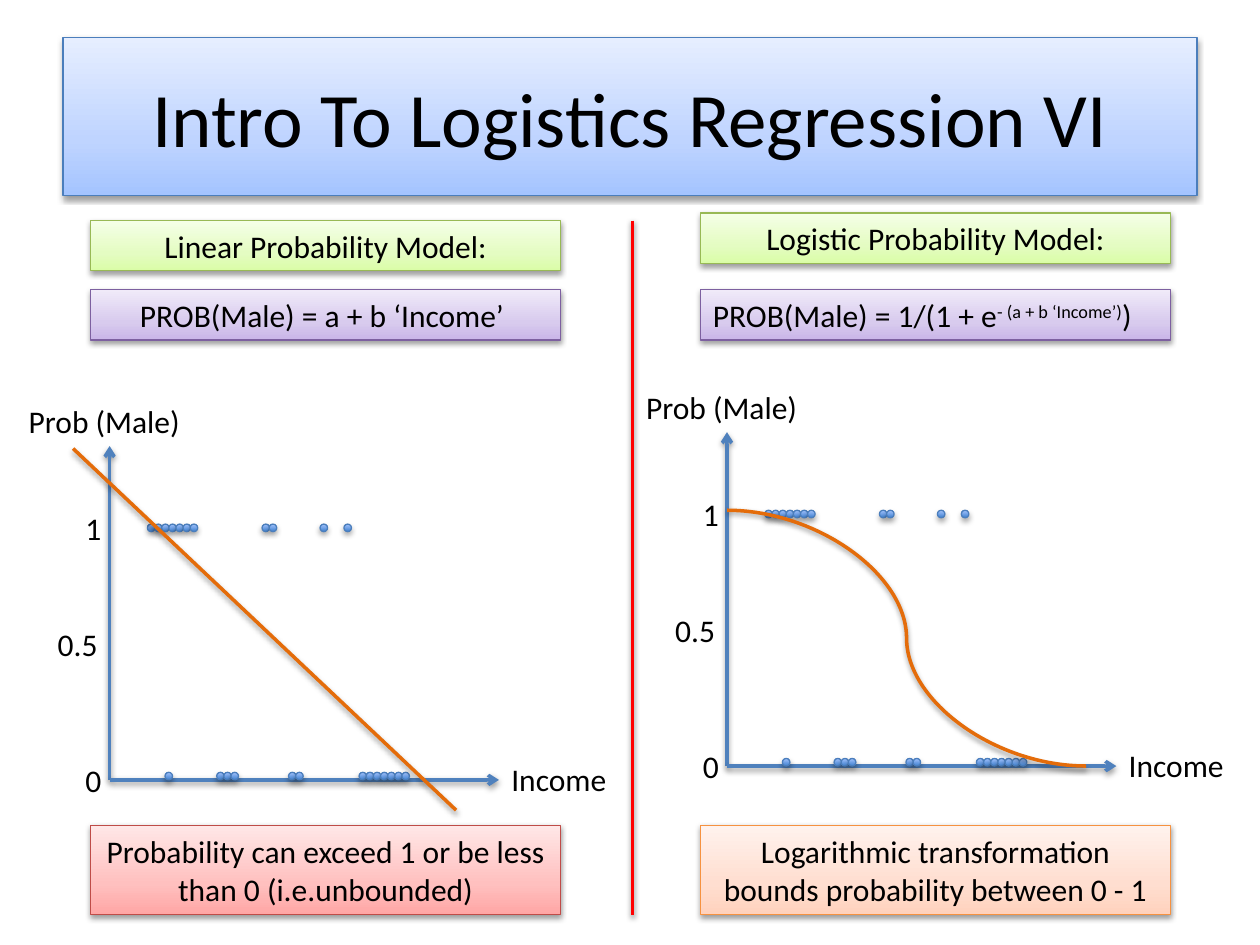
"""Build a slide that compares linear and logistic probability models."""
import copy
from dataclasses import dataclass

import lxml.etree
import pptx
import pptx.dml.color
import pptx.enum.shapes
import pptx.enum.text
import pptx.oxml.ns
import pptx.util

Inches = pptx.util.Inches
Shapes = pptx.enum.shapes.MSO_SHAPE
Connectors = pptx.enum.shapes.MSO_CONNECTOR
Align = pptx.enum.text.PP_ALIGN
Anchor = pptx.enum.text.MSO_ANCHOR
AutoSize = pptx.enum.text.MSO_AUTO_SIZE
qn = pptx.oxml.ns.qn


@dataclass(frozen=True)
class Style:
    line: str
    stops: tuple[tuple[float, str], ...]
    shadow_opacity: int = 38
    shadow_distance: int = 20000


@dataclass(frozen=True)
class Box:
    left: float
    top: float
    width: float
    height: float
    style: Style
    runs: tuple[tuple[str, int], ...]
    size: int = 18
    align: Align = Align.CENTER


@dataclass(frozen=True)
class Label:
    text: str
    left: float
    top: float
    width: float


@dataclass(frozen=True)
class DotGroup:
    left: float
    top: float
    count: int


BLUE = Style("4B7EBC", ((0, "A4C4FF"), (0.35, "BFD4FF"), (1, "E6EEFF")))
GREEN = Style("98B955", ((0, "DAFDA7"), (0.35, "E4FCC2"), (1, "F5FFE7")))
PURPLE = Style("7D60A0", ((0, "C9B5E8"), (0.35, "D8CBEE"), (1, "F0EAF9")))
RED = Style("BF4C48", ((0, "FFA6A5"), (0.35, "FFC0BF"), (1, "FFE7E7")))
ORANGE = Style("F69240", ((0, "FFD2BD"), (0.35, "FFDED0"), (1, "FFF2ED")))
DOT = Style("4B7EBC", ((0, "3F80CE"), (1, "A4C4FF")), 35, 23000)
AXIS_COLOR, CURVE_COLOR, DIVIDER_COLOR = "4F81BD", "E46C0A", "FF0000"

LEFT, RIGHT, WIDTH = 0.72, 5.56, 3.73
BOXES = (
    Box(0.5, 0.3, 9, 1.25, BLUE, (("Intro To Logistics Regression VI", 0),), 44),
    Box(LEFT, 1.75, WIDTH, 0.4, GREEN, (("Linear Probability Model:", 0),)),
    Box(LEFT, 2.3, WIDTH, 0.4, PURPLE, (("PROB(Male) = a + b ‘Income’ ", 0),)),
    Box(RIGHT, 1.69, WIDTH, 0.4, GREEN, (("Logistic Probability Model:", 0),)),
    Box(RIGHT, 2.3, WIDTH, 0.4, PURPLE,
        (("PROB(Male) = 1/(1 + e", 0), ("- (a + b ‘Income’)", 30), (")", 0)), align=Align.LEFT),
    Box(LEFT, 6.55, WIDTH, 0.71, RED,
        (("Probability can exceed 1 or be less than 0 (i.e.unbounded)", 0),)),
    Box(RIGHT, 6.55, WIDTH, 0.71, ORANGE,
        (("Logarithmic transformation bounds probability between 0 - 1", 0),)),
)

ORIGINS = ((0.87, 6.19), (5.77, 6.08))
AXIS_WIDTH, AXIS_HEIGHT = 3.09, 2.65
LABELS = (
    Label("Prob (Male)", -0.74, -3.05, 1.5),
    Label("Income", AXIS_WIDTH, -0.21, 0.95),
    Label("1", -0.29, -2.2, 0.59),
    Label("0.5", -0.51, -1.28, 0.59),
    Label("0", -0.29, -0.2, 0.59),
)
UPPER, LOWER = -2.03, -0.06
DOT_SIZE, DOT_PITCH = 0.06, 0.34 / 6
DOT_GROUPS = (
    DotGroup(0.3, UPPER, 7), DotGroup(1.21, UPPER, 2),
    DotGroup(1.67, UPPER, 1), DotGroup(1.86, UPPER, 1),
    DotGroup(0.44, LOWER, 1), DotGroup(0.85, LOWER, 3),
    DotGroup(1.42, LOWER, 2), DotGroup(1.98, LOWER, 7),
)


def color(value: str) -> pptx.dml.color.RGBColor:
    return pptx.dml.color.RGBColor.from_string(value)


def add_shadow(shape, opacity: int = 38, distance: int = 20000) -> None:
    properties = shape._element.spPr
    effects = properties.find(qn("a:effectLst"))
    if effects is None:
        effects = lxml.etree.SubElement(properties, qn("a:effectLst"))
    shadow = lxml.etree.SubElement(effects, qn("a:outerShdw"), blurRad="40000",
                                   dist=str(distance), dir="5400000", rotWithShape="0")
    tint = lxml.etree.SubElement(shadow, qn("a:srgbClr"), val="000000")
    lxml.etree.SubElement(tint, qn("a:alpha"), val=str(opacity * 1000))


def add_styled_shape(slide, kind, bounds: tuple[float, ...], style: Style):
    shape = slide.shapes.add_shape(kind, *map(Inches, bounds))
    shape.fill.gradient()
    shape.fill.gradient_angle = 90
    stop_list = shape._element.spPr.find(".//" + qn("a:gsLst"))
    while len(stop_list) < len(style.stops):
        stop_list.append(copy.deepcopy(stop_list[0]))
    for stop, (position, value) in zip(shape.fill.gradient_stops, style.stops):
        stop.position = position
        stop.color.rgb = color(value)
    shape.line.color.rgb = color(style.line)
    shape.line.width = pptx.util.Pt(0.75)
    shape.shadow.inherit = False
    add_shadow(shape, style.shadow_opacity, style.shadow_distance)
    return shape


def write_text(shape, runs: tuple[tuple[str, int], ...], size: int, align: Align,
               frame_format: dict) -> None:
    for name, value in frame_format.items():
        setattr(shape.text_frame, name, value)
    paragraph = shape.text_frame.paragraphs[0]
    paragraph.alignment = align
    for text, baseline in runs:
        run = paragraph.add_run()
        run.text = text
        for name, value in {"name": "Calibri", "size": pptx.util.Pt(size)}.items():
            setattr(run.font, name, value)
        run.font.color.rgb = color("000000")
        if baseline:
            run._r.get_or_add_rPr().set("baseline", str(baseline * 1000))


def add_box(slide, box: Box) -> None:
    shape = add_styled_shape(slide, Shapes.RECTANGLE,
                             (box.left, box.top, box.width, box.height), box.style)
    write_text(shape, box.runs, box.size, box.align,
               {"word_wrap": True, "vertical_anchor": Anchor.MIDDLE})


def add_label(slide, label: Label, x: float, y: float) -> None:
    bounds = (x + label.left, y + label.top, label.width, 0.4)
    shape = slide.shapes.add_textbox(*map(Inches, bounds))
    write_text(shape, ((label.text, 0),), 18, Align.LEFT,
               {"word_wrap": True, "margin_right": Inches(0),
                "auto_size": AutoSize.SHAPE_TO_FIT_TEXT})


def add_line(slide, ends: tuple[float, ...], value: str, arrow: bool = False,
             kind: Connectors = Connectors.STRAIGHT) -> None:
    connector = slide.shapes.add_connector(kind, *map(Inches, ends))
    connector.line.color.rgb = color(value)
    connector.line.width = pptx.util.Pt(2)
    if arrow:
        outline = connector.line._get_or_add_ln()
        lxml.etree.SubElement(outline, qn("a:tailEnd"), type="arrow")
    add_shadow(connector)


def add_plot(slide, x: float, y: float) -> None:
    for end in ((x, y - AXIS_HEIGHT), (x + AXIS_WIDTH, y)):
        add_line(slide, (x, y, *end), AXIS_COLOR, arrow=True)
    for label in LABELS:
        add_label(slide, label, x, y)
    for group in DOT_GROUPS:
        for index in range(group.count):
            left = x + group.left + index * DOT_PITCH
            add_styled_shape(slide, Shapes.OVAL,
                             (left, y + group.top, DOT_SIZE, DOT_SIZE), DOT)


def main() -> None:
    presentation = pptx.Presentation()
    presentation.slide_width, presentation.slide_height = Inches(10), Inches(7.5)
    slide = presentation.slides.add_slide(presentation.slide_layouts[6])
    for box in BOXES:
        add_box(slide, box)
    for x, y in ORIGINS:
        add_plot(slide, x, y)
    add_line(slide, (5.02, 1.75, 5.02, 7.26), DIVIDER_COLOR)
    add_line(slide, (0.58, 3.56, 3.62, 6.43), CURVE_COLOR)
    add_line(slide, (5.77, 4.05, 8.62, 6.08), CURVE_COLOR, kind=Connectors.CURVE)
    presentation.save("out.pptx")


if __name__ == "__main__":
    main()
